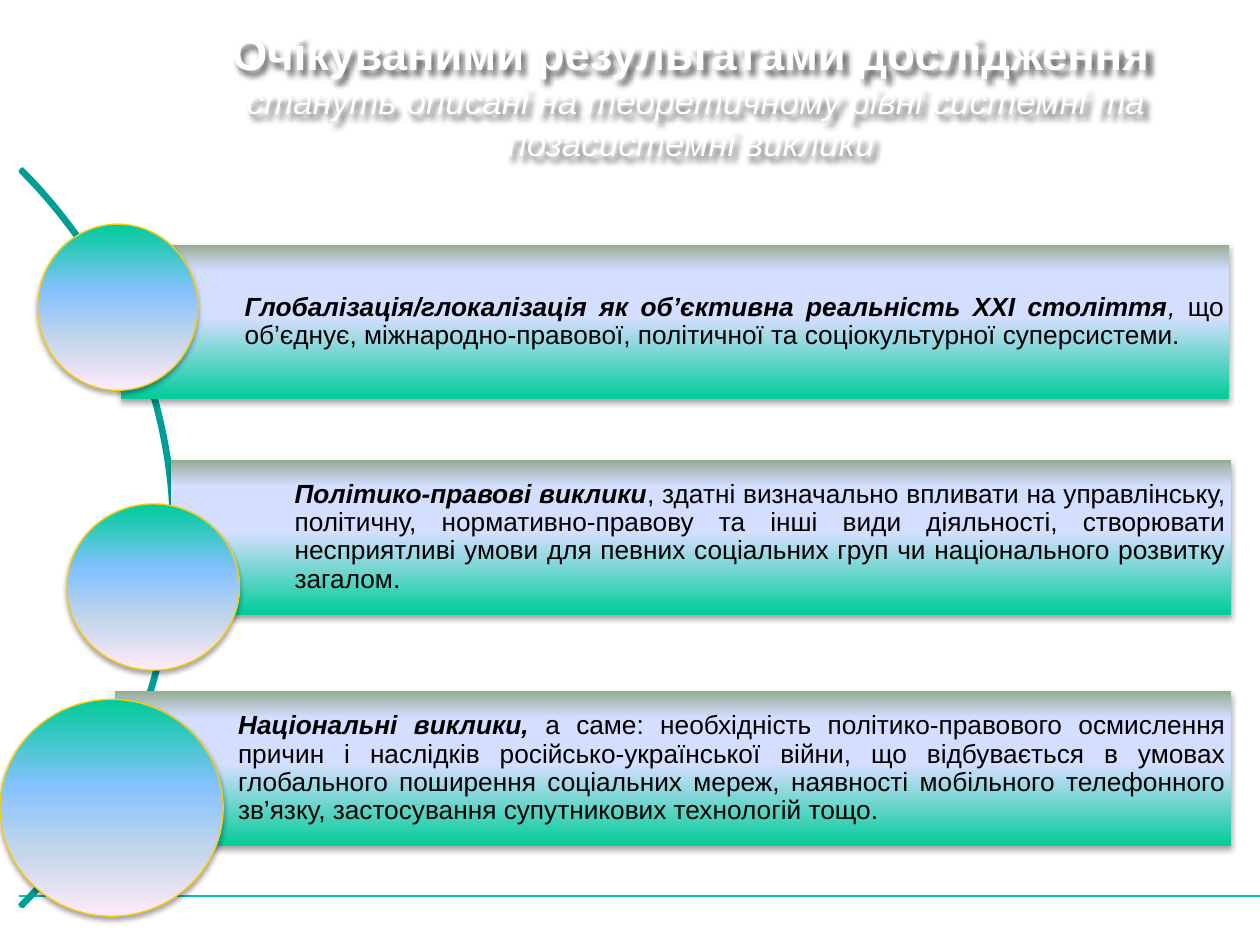
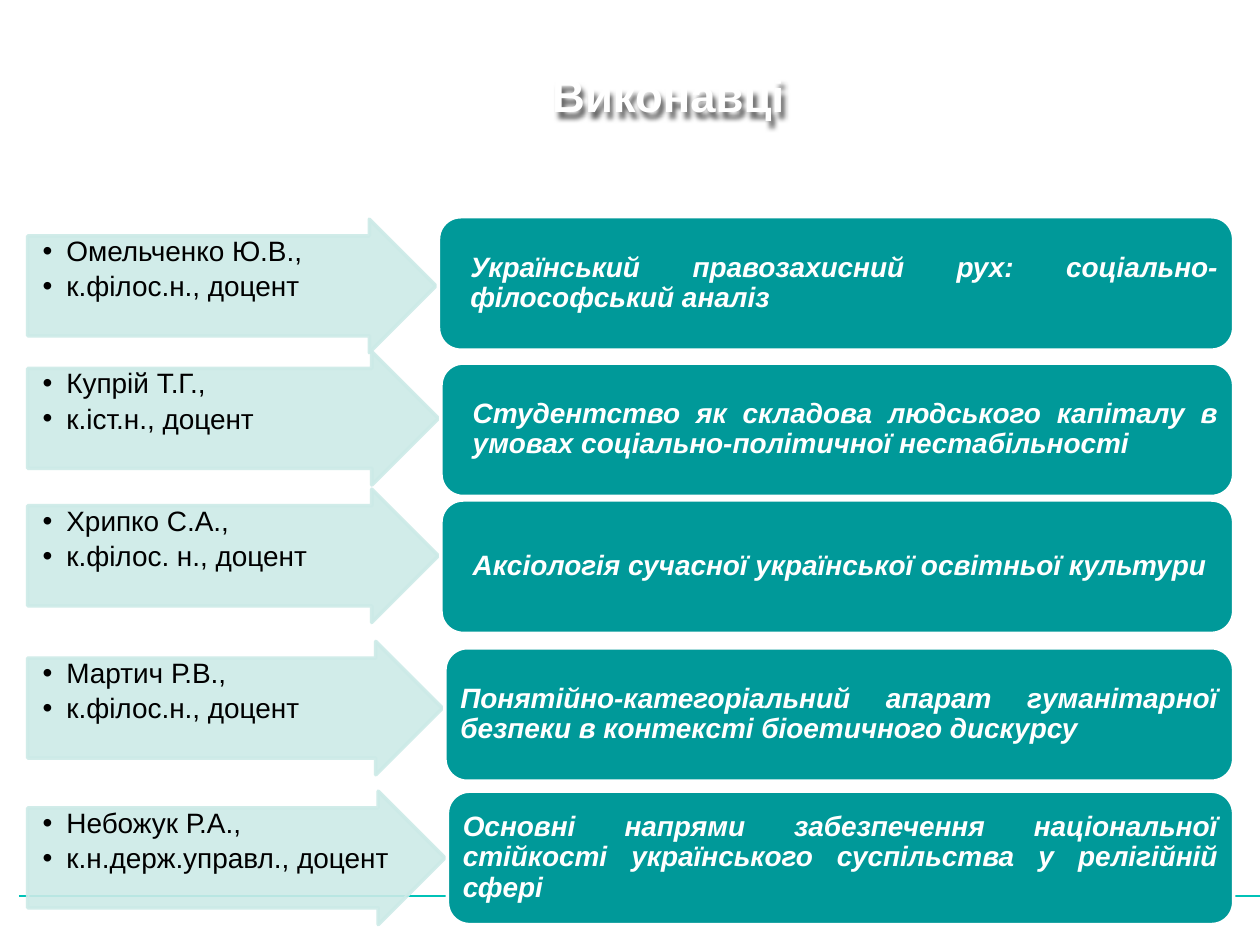
from lxml.etree import SubElement
from pptx import Presentation
from pptx.dml.color import RGBColor
from pptx.enum.shapes import MSO_CONNECTOR, MSO_SHAPE
from pptx.enum.text import MSO_ANCHOR, PP_ALIGN
from pptx.oxml.ns import qn
from pptx.util import Cm, Pt

FONT = "Arial"
WHITE = RGBColor(0xFF, 0xFF, 0xFF)
BLACK = RGBColor(0x00, 0x00, 0x00)
TEAL = RGBColor(0x00, 0x99, 0x99)
ARC_TEAL = RGBColor(0x00, 0x9F, 0x96)
FOOTER_TEAL = RGBColor(0x00, 0xC2, 0xB7)
PALE_TEAL = RGBColor(0xCC, 0xEA, 0xE7)
GOLD = RGBColor(0xFF, 0xCC, 0x00)
GREEN = RGBColor(0x00, 0xCC, 0x99)
LAVENDER = RGBColor(0xD4, 0xDE, 0xFF)
SAGE = RGBColor(0x96, 0xAB, 0x94)
SKY = RGBColor(0x85, 0xC2, 0xFF)
MIST = RGBColor(0xC4, 0xD6, 0xEB)
BLUSH = RGBColor(0xFF, 0xEB, 0xFA)

BAR_STOPS = [(0, GREEN), (53, LAVENDER), (83, LAVENDER), (100, SAGE)]
DISC_STOPS = [(0, GREEN), (40, SKY), (70, MIST), (100, BLUSH)]
UPWARD, DOWNWARD = 90, 270

SLIDE_WIDTH, SLIDE_HEIGHT = 25.4, 19.05
BAR_HEIGHT = 3.12
ROW_HEIGHT = 2.69
ARROW_LEFT = 0.56
CARD_GAP = 0.05
CARD_RIGHT = 24.87

# Bar box (left, top, width), disc box (offset from bar, size), text runs
CHALLENGES = [
    ((2.44, 4.93, 22.33), (-1.68, -0.41, 3.23, 3.35), [
        ("Глобалізація/глокалізація як об’єктивна реальність ХХІ століття", True, True),
        (", ", False, True),
        ("що об’єднує, міжнародно-правової, політичної та соціокультурної "
         "суперсистеми.", False, False)]),
    ((3.45, 9.27, 21.36), (-2.1, 0.89, 3.48, 3.35), [
        ("Політико-правові виклики", True, True),
        (", здатні визначально впливати на управлінську, політичну, "
         "нормативно-правову та інші види діяльності, створювати несприятливі "
         "умови для певних соціальних груп чи національного розвитку загалом.",
         False, False)]),
    ((2.31, 13.94, 22.5), (-2.31, 0.16, 4.5, 4.37), [
        ("Національні виклики, ", True, True),
        ("а саме: необхідність політико-правового осмислення причин і наслідків "
         "російсько-української війни, що відбувається в умовах глобального "
         "поширення соціальних мереж, наявності мобільного телефонного зв’язку, "
         "застосування супутникових технологій тощо.", False, False)]),
]

# Arrow top, arrow width, card top, card text inset, name, degree, topic, alignment
PERFORMERS = [
    (4.42, 8.23, 4.37, 0.51, "Омельченко Ю.В.,", "к.філос.н., доцент",
     "Український правозахисний рух: соціально-філософський аналіз",
     PP_ALIGN.JUSTIFY),
    (7.09, 8.28, 7.32, 0.51, "Купрій Т.Г.,", "к.іст.н., доцент",
     "Студентство як складова людського капіталу в умовах "
     "соціально-політичної нестабільності", PP_ALIGN.JUSTIFY),
    (9.86, 8.28, 10.08, 0.51, "Хрипко С.А.,", "к.філос. н., доцент",
     "Аксіологія сучасної української освітньої культури", PP_ALIGN.LEFT),
    (12.93, 8.36, 13.06, 0.18, "Мартич Р.В.,", "к.філос.н., доцент",
     "Понятійно-категоріальний апарат гуманітарної безпеки в контексті "
     "біоетичного дискурсу", PP_ALIGN.JUSTIFY),
    (15.95, 8.41, 15.95, 0.18, "Небожук Р.А.,", "к.н.держ.управл., доцент",
     "Основні напрями забезпечення національної стійкості українського "
     "суспільства у релігійній сфері", PP_ALIGN.JUSTIFY),
]


def add_preset(slide, preset, box, line=None, width=0.75):
    shape = slide.shapes.add_shape(preset, *map(Cm, box))
    shape.shadow.inherit = False
    if line is None:
        shape.line.fill.background()
    else:
        shape.line.color.rgb = line
        shape.line.width = Pt(width)
    return shape


def fill_gradient(shape, stops, angle):
    shape.fill.gradient()
    shape.fill.gradient_angle = angle
    stop_list = next(shape._element.spPr.iter(qn("a:gsLst")))
    for stop in list(stop_list):
        stop_list.remove(stop)
    for percent, color in stops:
        stop = SubElement(stop_list, qn("a:gs"), pos=str(percent * 1000))
        SubElement(stop, qn("a:srgbClr"), val=str(color))


def cast_shadow(shape, blur, distance, direction, opacity):
    shape.shadow.inherit = False
    effects = shape._element.spPr.find(qn("a:effectLst"))
    shadow = SubElement(effects, qn("a:outerShdw"), blurRad=str(Pt(blur)),
                        dist=str(Pt(distance)), dir=str(direction * 60000),
                        algn="ctr", rotWithShape="0")
    color = SubElement(shadow, qn("a:srgbClr"), val=str(BLACK))
    SubElement(color, qn("a:alpha"), val=str(opacity * 1000))


def set_opacity(shape, percent):
    """Make fill and line of a solid shape equally translucent."""
    for color in shape._element.spPr.iter(qn("a:srgbClr")):
        SubElement(color, qn("a:alpha"), val=str(percent * 1000))


def set_frame(shape, anchor, left, top, right, bottom):
    frame = shape.text_frame
    frame.word_wrap = True
    frame.vertical_anchor = anchor
    frame.margin_left, frame.margin_top = Cm(left), Cm(top)
    frame.margin_right, frame.margin_bottom = Cm(right), Cm(bottom)
    return frame


def add_run(paragraph, text, size, color, bold=False, italic=False):
    run = paragraph.add_run()
    run.text = text
    run.font.name = FONT
    run.font.size = Pt(size)
    run.font.bold = bold
    run.font.italic = italic
    run.font.color.rgb = color


def add_bullet(paragraph):
    properties = paragraph._p.get_or_add_pPr()
    properties.set("marL", str(Cm(0.48)))
    properties.set("indent", str(-Cm(0.48)))
    SubElement(properties, qn("a:buFont"), typeface=FONT)
    SubElement(properties, qn("a:buChar"), char="•")


def add_title(slide, box, heading, subheading=None):
    title = slide.shapes.add_textbox(*map(Cm, box))
    cast_shadow(title, 3, 3, 60, 60)
    frame = set_frame(title, MSO_ANCHOR.BOTTOM, 0.25, 0.13, 0.25, 0.13)
    paragraph = frame.paragraphs[0]
    paragraph.alignment = PP_ALIGN.CENTER
    add_run(paragraph, heading, 26, WHITE, bold=True)
    if subheading:
        paragraph.add_line_break()
        add_run(paragraph, subheading, 20, WHITE, italic=True)


def add_base_slide(prs):
    """Add a blank slide with the shared rule near its foot."""
    slide = prs.slides.add_slide(prs.slide_layouts[6])
    rule = slide.shapes.add_connector(MSO_CONNECTOR.STRAIGHT, Cm(0.38), Cm(18.06),
                                      Cm(SLIDE_WIDTH), Cm(18.06))
    rule.line.color.rgb = FOOTER_TEAL
    rule.line.width = Pt(0.75)
    SubElement(rule._element.spPr, qn("a:effectLst"))
    return slide


def add_arc(slide, box):
    arc = add_preset(slide, MSO_SHAPE.BLOCK_ARC, box, ARC_TEAL, 2)
    arc.fill.background()
    for index, value in enumerate((189, 27, 0.003)):
        arc.adjustments[index] = value


def add_challenge(slide, bar_box, disc_box, runs):
    left, top, width = bar_box
    bar = add_preset(slide, MSO_SHAPE.RECTANGLE, (left, top, width, BAR_HEIGHT))
    fill_gradient(bar, BAR_STOPS, UPWARD)
    cast_shadow(bar, 3.1, 1.8, 90, 35)
    paragraph = set_frame(bar, MSO_ANCHOR.MIDDLE, 2.49, 0.1, 0.1, 0.1).paragraphs[0]
    paragraph.alignment = PP_ALIGN.JUSTIFY
    paragraph.line_spacing = 0.9
    for text, bold, italic in runs:
        add_run(paragraph, text, 15, BLACK, bold, italic)

    dx, dy, disc_width, disc_height = disc_box
    disc = add_preset(slide, MSO_SHAPE.OVAL,
                      (left + dx, top + dy, disc_width, disc_height), GOLD)
    fill_gradient(disc, DISC_STOPS, DOWNWARD)
    cast_shadow(disc, 3.1, 1.8, 90, 35)


def add_performer_arrow(slide, box, lines):
    arrow = add_preset(slide, MSO_SHAPE.RIGHT_ARROW, box, PALE_TEAL, 2)
    arrow.adjustments[0] = 0.75
    arrow.fill.solid()
    arrow.fill.fore_color.rgb = PALE_TEAL
    set_opacity(arrow, 90)
    frame = set_frame(arrow, MSO_ANCHOR.TOP, 0.3, 0.03, 0.03, 0.03)
    for index, text in enumerate(lines):
        paragraph = frame.add_paragraph() if index else frame.paragraphs[0]
        paragraph.alignment = PP_ALIGN.LEFT
        paragraph.line_spacing = 0.9
        paragraph.space_after = Pt(2.8)
        add_bullet(paragraph)
        add_run(paragraph, text, 16, BLACK)


def add_topic_card(slide, box, inset, topic, alignment):
    card = add_preset(slide, MSO_SHAPE.ROUNDED_RECTANGLE, box, WHITE, 2)
    card.fill.solid()
    card.fill.fore_color.rgb = TEAL
    frame = set_frame(card, MSO_ANCHOR.MIDDLE, inset, 0.08, 0.18, 0.08)
    paragraph = frame.paragraphs[0]
    paragraph.alignment = alignment
    paragraph.line_spacing = 0.9
    add_run(paragraph, topic, 16, WHITE, bold=True, italic=True)


def build_results_slide(prs):
    slide = add_base_slide(prs)
    add_title(slide, (3.71, 0.18, 20.45, 3.25),
              "Очікуваними результатами дослідження",
              " стануть описані на теоретичному рівні системні та "
              "позасистемні виклики")
    add_arc(slide, (-17.5, 0.33, 21.03, 21.03))
    for bar_box, disc_box, runs in CHALLENGES:
        add_challenge(slide, bar_box, disc_box, runs)


def build_performers_slide(prs):
    slide = add_base_slide(prs)
    add_title(slide, (3.25, 0.53, 20.45, 2.06), "Виконавці")
    for (arrow_top, arrow_width, card_top, inset,
         name, degree, topic, alignment) in PERFORMERS:
        add_performer_arrow(slide, (ARROW_LEFT, arrow_top, arrow_width, ROW_HEIGHT),
                            (name, degree))
        card_left = ARROW_LEFT + arrow_width + CARD_GAP
        add_topic_card(slide, (card_left, card_top, CARD_RIGHT - card_left, ROW_HEIGHT),
                       inset, topic, alignment)


def main():
    prs = Presentation()
    prs.slide_width, prs.slide_height = Cm(SLIDE_WIDTH), Cm(SLIDE_HEIGHT)
    build_results_slide(prs)
    build_performers_slide(prs)
    prs.save("out.pptx")


if __name__ == "__main__":
    main()
